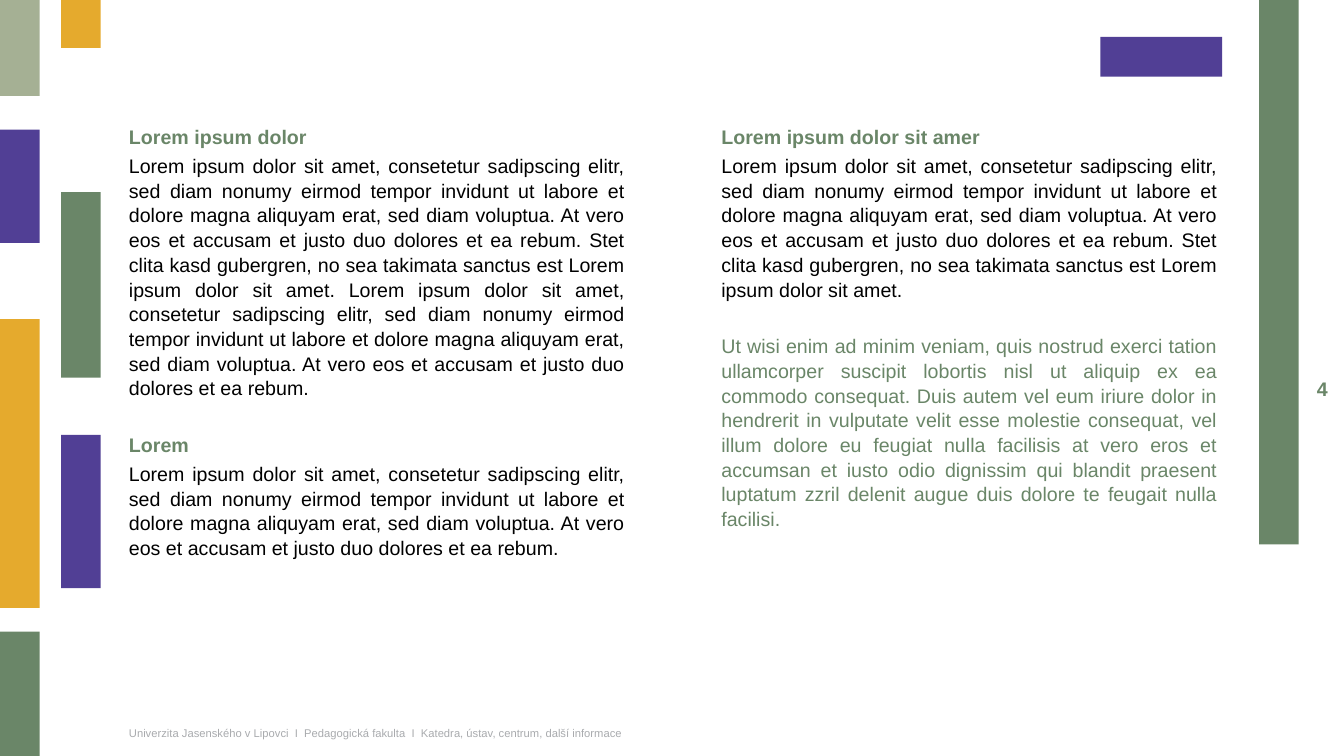
from pptx import Presentation
from pptx import util as u
from pptx.dml.color import RGBColor
from pptx.enum import shapes, text

COLORS = {"green": "6A8668", "sage": "A5B094", "purple": "513F95",
          "gold": "E5AA2D", "gray": "A9ABAE", "black": "000000"}

# Content: each column is a list of (style, text)
LOREM_SHORT = ("Lorem ipsum dolor sit amet, consetetur sadipscing elitr, sed diam nonumy "
               "eirmod tempor invidunt ut labore et dolore magna aliquyam erat, sed diam "
               "voluptua. At vero eos et accusam et justo duo dolores et ea rebum.")
LOREM_MEDIUM = (LOREM_SHORT + " Stet clita kasd gubergren, no sea takimata sanctus est "
                "Lorem ipsum dolor sit amet.")
LOREM_LONG = LOREM_MEDIUM + " " + LOREM_SHORT
UT_WISI = ("Ut wisi enim ad minim veniam, quis nostrud exerci tation ullamcorper suscipit "
           "lobortis nisl ut aliquip ex ea commodo consequat. Duis autem vel eum iriure "
           "dolor in hendrerit in vulputate velit esse molestie consequat, vel illum dolore "
           "eu feugiat nulla facilisis at vero eros et accumsan et iusto odio dignissim qui "
           "blandit praesent luptatum zzril delenit augue duis dolore te feugait nulla "
           "facilisi.")
LEFT_COLUMN = [("heading", "Lorem ipsum dolor"), ("body", LOREM_LONG),
               ("next heading", "Lorem"), ("body", LOREM_SHORT)]
RIGHT_COLUMN = [("heading", "Lorem ipsum dolor sit amer"), ("body", LOREM_MEDIUM),
                ("accent", UT_WISI)]
FOOTER = ("Univerzita Jasenského v Lipovci  I  Pedagogická fakulta  I  "
          "Katedra, ústav, centrum, další informace")
PAGE_NUMBER = "4"

# Paragraph styles: color, bold, space before in points
STYLES = {"heading": ("green", True, 3), "next heading": ("green", True, 22.9),
          "body": ("black", False, 3), "accent": ("green", False, 22.9)}

# Bars in cm: left edge -> (top, height, color)
BAR = 1.0
BARS = {
    0: [(0, 2.42, "sage"), (3.27, 2.85, "purple"), (8.04, 7.28, "gold"),
        (15.92, 3.13, "green")],
    1.54: [(0, 1.21, "gold"), (4.84, 4.68, "green"), (10.96, 3.86, "purple")],
    31.73: [(0, 13.72, "green")],
}
MARGIN, COLUMN_WIDTH = 3.0, 13.0

deck = Presentation()
deck.slide_width, deck.slide_height = u.Cm(33.87), u.Cm(19.05)
page = deck.slides.add_slide(deck.slide_layouts[6])


def add_bar(left, top, width, height, color):
    bar = page.shapes.add_shape(shapes.MSO_SHAPE.RECTANGLE, u.Cm(left), u.Cm(top),
                                u.Cm(width), u.Cm(height))
    bar.shadow.inherit = False
    bar.fill.solid()
    bar.fill.fore_color.rgb = RGBColor.from_string(COLORS[color])
    bar.line.fill.background()


def add_box(left, top, width, height, anchor=text.MSO_ANCHOR.TOP):
    box = page.shapes.add_textbox(u.Cm(left), u.Cm(top), u.Cm(width), u.Cm(height))
    box.text_frame.word_wrap = True
    box.text_frame.vertical_anchor = anchor
    return box.text_frame


def write(para, words, size=14, color="black", bold=False,
          align=text.PP_ALIGN.LEFT, before=0, spacing=1.0):
    para.alignment = align
    para.space_before = u.Pt(before)
    para.line_spacing = spacing
    span = para.add_run()
    span.text = words
    span.font.name = "Arial"
    span.font.size = u.Pt(size)
    span.font.bold = bold
    span.font.color.rgb = RGBColor.from_string(COLORS[color])


# Footer and page number
write(add_box(MARGIN, 18.16, 13.94, 0.61, text.MSO_ANCHOR.MIDDLE).paragraphs[0],
      FOOTER, size=8, color="gray")
write(add_box(32.59, 9.37, 1.12, 0.86, text.MSO_ANCHOR.MIDDLE).paragraphs[0],
      PAGE_NUMBER, color="green", bold=True, align=text.PP_ALIGN.RIGHT)

# Text columns
for left, height, column in [(17.93, 10.16, RIGHT_COLUMN), (MARGIN, 10.85, LEFT_COLUMN)]:
    frame = add_box(left, MARGIN, COLUMN_WIDTH, height)
    for index, (style, words) in enumerate(column):
        para = frame.add_paragraph() if index else frame.paragraphs[0]
        color, bold, before = STYLES[style]
        write(para, words, color=color, bold=bold, before=before,
              align=text.PP_ALIGN.JUSTIFY, spacing=1.05)

# Decorative bars
add_bar(27.73, 0.93, 3.07, BAR, "purple")
for left, stack in BARS.items():
    for top, height, color in stack:
        add_bar(left, top, BAR, height, color)

deck.save("out.pptx")
